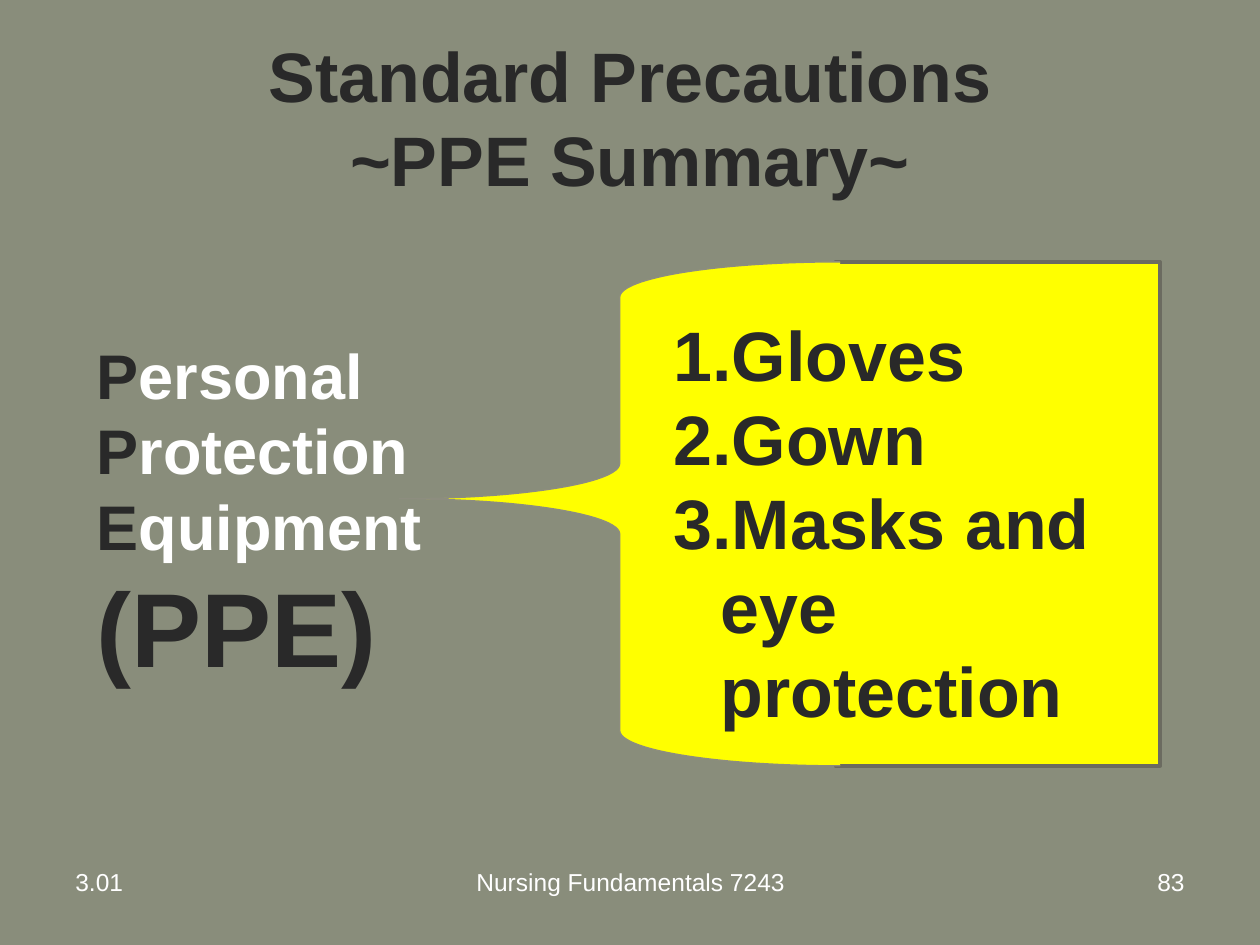
from dataclasses import dataclass

from lxml.etree import SubElement
from pptx import Presentation
from pptx.dml.color import RGBColor as Rgb
from pptx.enum.shapes import MSO_SHAPE as Preset
from pptx.enum.text import MSO_ANCHOR as Anchor, PP_ALIGN as Align
from pptx.oxml.ns import qn
from pptx.util import Cm, Pt


@dataclass(frozen=True)
class Theme:
    font: str = "Arial"
    background: Rgb = Rgb(0x89, 0x8D, 0x7B)
    dark: Rgb = Rgb(0x29, 0x29, 0x29)
    light: Rgb = Rgb(0xFF, 0xFF, 0xFF)
    callout: Rgb = Rgb(0xFF, 0xFF, 0x00)
    panel_edge: Rgb = Rgb(0x6B, 0x6B, 0x60)
    brace_edge: Rgb = Rgb(0x8D, 0x8D, 0x7F)
    heading: Pt = Pt(40)
    body: Pt = Pt(36)
    acronym: Pt = Pt(60)
    footer: Pt = Pt(14)


THEME = Theme()


def apply_format(target, values):
    for name, value in values.items():
        setattr(target, name, value)


def add_text(slide, box, paragraphs, anchor=Anchor.TOP, **paragraph_format):
    frame = slide.shapes.add_textbox(*map(Cm, box)).text_frame
    apply_format(frame, {"word_wrap": True, "vertical_anchor": anchor})
    for index, runs in enumerate(paragraphs):
        paragraph = frame.add_paragraph() if index else frame.paragraphs[0]
        apply_format(paragraph, paragraph_format)
        for words, size, color, bold in runs:
            for line_index, line in enumerate(words.split("\n")):
                if line_index:
                    paragraph.add_line_break()
                run = paragraph.add_run()
                run.text = line
                apply_format(run.font, {"name": THEME.font, "size": size, "bold": bold})
                run.font.color.rgb = color
    return frame


def add_numbered_list(slide, box, items):
    runs = [[(item, THEME.heading, THEME.dark, True)] for item in items]
    indent = Cm(0.95)
    for paragraph in add_text(slide, box, runs).paragraphs:
        properties = paragraph._p.get_or_add_pPr()
        properties.set("marL", str(indent))
        properties.set("indent", str(-indent))
        SubElement(properties, qn("a:buFont"), typeface="+mj-lt")
        SubElement(properties, qn("a:buAutoNum"), type="arabicPeriod")


def add_callout_part(group, preset, box, edge, width):
    part = group.shapes.add_shape(preset, *map(Cm, box))
    part.shadow.inherit = False
    part.fill.solid()
    part.fill.fore_color.rgb = THEME.callout
    part.line.color.rgb = edge
    part.line.width = Pt(width)
    return part


def add_callout(slide):
    group = slide.shapes.add_group_shape()
    top, height = 5.28, 10.16
    add_callout_part(group, Preset.RECTANGLE, (16.84, top, 6.55, height),
                     THEME.panel_edge, 2)
    brace = add_callout_part(group, Preset.RIGHT_BRACE, (8.05, top, 8.89, height),
                             THEME.brace_edge, 0.75)
    brace.adjustments[0], brace.adjustments[1] = 0.08, 0.47
    brace._element.spPr.xfrm.set("flipH", "1")


def add_acronym(slide):
    runs = []
    for word in ("Personal ", "Protection ", "Equipment "):
        runs += [(word[0], THEME.body, THEME.dark, True),
                 (word[1:], THEME.body, THEME.light, True)]
    runs.append(("(PPE)", THEME.acronym, THEME.dark, True))
    add_text(slide, (1.7, 6.65, 8.26, 7.42), [runs], space_before=Pt(7.2))


def add_footer(slide):
    for words, left, width, align in (
        ("Nursing Fundamentals 7243", 8.69, 8.05, Align.CENTER),
        ("83", 18.21, 5.92, Align.RIGHT),
        ("3.01", 1.27, 5.92, Align.LEFT),
    ):
        add_text(slide, (left, 17.35, width, 1.32),
                 [[(words, THEME.footer, THEME.light, False)]], alignment=align)


def main():
    deck = Presentation()
    apply_format(deck, {"slide_width": Cm(25.4), "slide_height": Cm(19.05)})
    slide = deck.slides.add_slide(deck.slide_layouts[6])
    slide.background.fill.solid()
    slide.background.fill.fore_color.rgb = THEME.background
    title = "Standard Precautions\n~PPE Summary~"
    add_text(slide, (1.27, 0.76, 22.86, 3.18),
             [[(title, THEME.heading, THEME.dark, True)]],
             anchor=Anchor.MIDDLE, alignment=Align.CENTER)
    add_acronym(slide)
    add_callout(slide)
    add_numbered_list(slide, (13.33, 6.15, 9.09, 9.58),
                      ("Gloves", "Gown", "Masks and eye protection"))
    add_footer(slide)
    deck.save("out.pptx")


if __name__ == "__main__":
    main()
